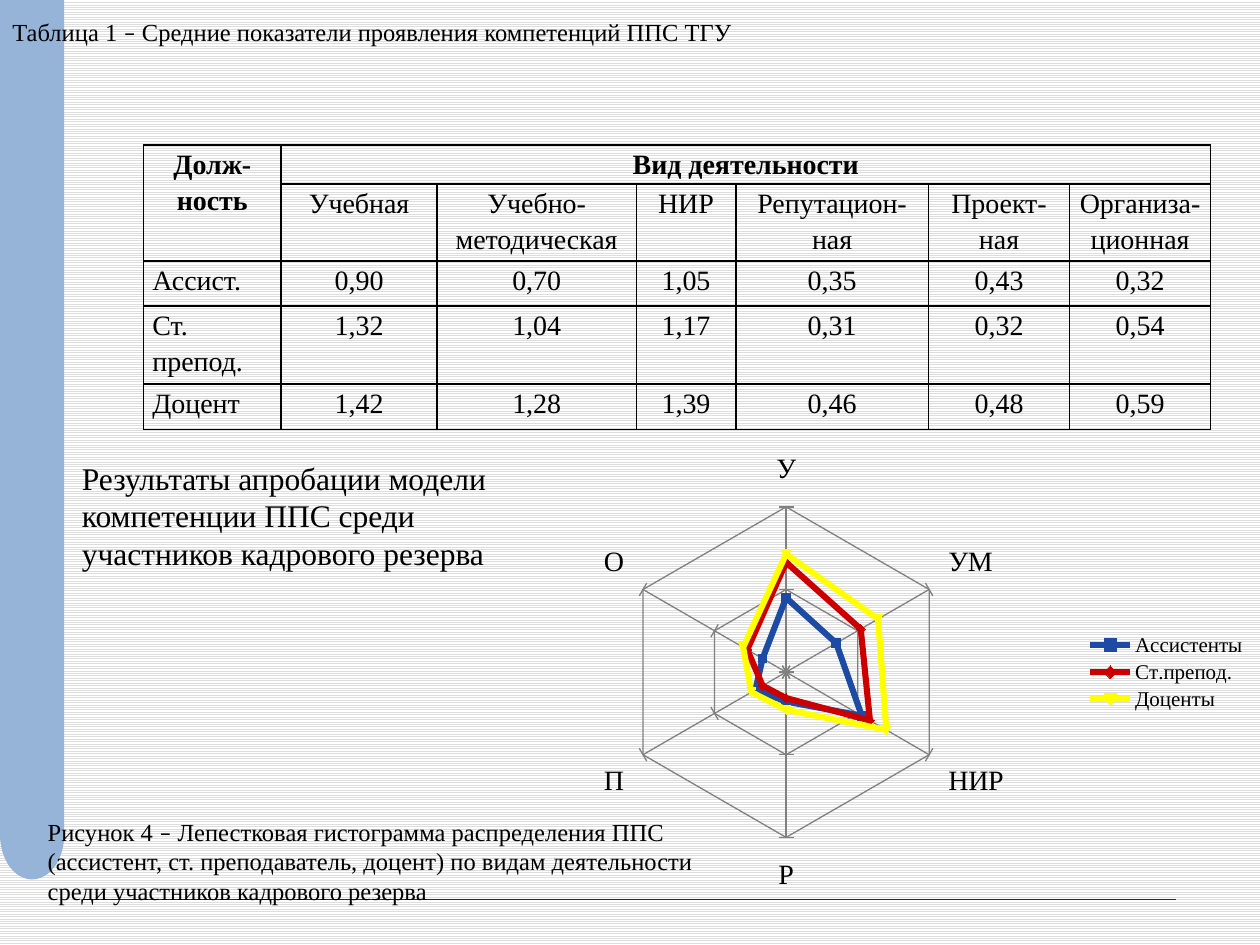
"""Build the slide on competency indicators of the teaching staff."""
from dataclasses import dataclass

from lxml import etree
from pptx import Presentation
from pptx import util as u
from pptx.chart import data as cd
from pptx.dml.color import RGBColor
from pptx.enum import chart as ce
from pptx.enum import dml, shapes, text
from pptx.oxml import ns

BLACK = RGBColor(0, 0, 0)
WHITE = RGBColor(0xFF, 0xFF, 0xFF)
STRIPE = RGBColor(0xDD, 0xDD, 0xDD)
NAVY = RGBColor(0x00, 0x33, 0x66)
SIDE_BLUE = RGBColor(0x96, 0xB4, 0xD7)
GRID_GREY = RGBColor(0x80, 0x80, 0x80)
SERIF = "Times New Roman"
DASH_FONT = "Calibri"


@dataclass
class Position:
    name: str
    scores: list[str]


@dataclass
class Profile:
    name: str
    values: list[int]
    color: RGBColor


POSITIONS = [
    Position("Ассист.", ["0,90", "0,70", "1,05", "0,35", "0,43", "0,32"]),
    Position("Ст. препод.", ["1,32", "1,04", "1,17", "0,31", "0,32", "0,54"]),
    Position("Доцент", ["1,42", "1,28", "1,39", "0,46", "0,48", "0,59"]),
]
ACTIVITIES = ["Учебная", "Учебно-методическая", "НИР", "Репутацион-ная",
              "Проект-ная", "Организа-ционная"]
COLUMN_WIDTHS = [1.09, 1.24, 1.58, 0.79, 1.53, 1.12, 1.12]
ROW_HEIGHTS = [0.31, 0.61, 0.36, 0.62, 0.36]
AXES = ["У", "УМ", "НИР", "Р", "П", "О"]
PROFILES = [
    Profile("Ассистенты", [63, 49, 74, 25, 30, 23], RGBColor(0x1D, 0x4A, 0xA3)),
    Profile("Ст.препод.", [93, 73, 82, 22, 23, 38], RGBColor(0xCC, 0, 0)),
    Profile("Доценты", [100, 90, 98, 32, 34, 42], RGBColor(0xFF, 0xFF, 0)),
]


def write(frame, wording: str, *, size: float, bold: bool = False,
          align=text.PP_ALIGN.LEFT, anchor=text.MSO_ANCHOR.TOP,
          spacing: float = 1.0) -> None:
    """Fill a text frame, setting each dash in its own font."""
    frame.word_wrap = True
    frame.vertical_anchor = anchor
    paragraph = frame.paragraphs[0]
    paragraph.alignment = align
    paragraph.line_spacing = spacing
    before, dash, after = wording.partition("–")
    for piece in filter(None, (before, dash, after)):
        run = paragraph.add_run()
        run.text = piece
        run.font.name = DASH_FONT if piece == "–" else SERIF
        run.font.size = u.Pt(size)
        run.font.bold = bold
        run.font.color.rgb = BLACK


def add_backdrop(slide) -> None:
    """Draw the striped background, the side band and the bottom rule."""
    fill = slide.background.fill
    fill.patterned()
    fill.pattern = dml.MSO_PATTERN.LIGHT_HORIZONTAL
    fill.fore_color.rgb = STRIPE
    fill.back_color.rgb = WHITE
    rule = slide.shapes.add_connector(
        shapes.MSO_CONNECTOR.STRAIGHT,
        u.Inches(0.67), u.Inches(7.14), u.Inches(9.33), u.Inches(7.14))
    rule.line.color.rgb = NAVY
    rule.line.width = u.Pt(0.25)
    etree.SubElement(rule.element.spPr, ns.qn("a:effectLst"))
    for preset, top, height in ((shapes.MSO_SHAPE.RECTANGLE, 0, 6.66),
                                (shapes.MSO_SHAPE.OVAL, 6.27, 0.71)):
        band = slide.shapes.add_shape(
            preset, 0, u.Inches(top), u.Inches(0.51), u.Inches(height))
        band.shadow.inherit = False
        band.fill.solid()
        band.fill.fore_color.rgb = SIDE_BLUE
        band.line.fill.background()


def add_borders(cell) -> None:
    """Give a cell thin black borders on every side."""
    properties = cell._tc.get_or_add_tcPr()
    for index, side in enumerate(("lnL", "lnR", "lnT", "lnB")):
        border = etree.Element(ns.qn(f"a:{side}"), w=str(u.Pt(1)))
        solid = etree.SubElement(border, ns.qn("a:solidFill"))
        etree.SubElement(solid, ns.qn("a:srgbClr"), val=str(BLACK))
        properties.insert(index, border)


def add_scores(slide) -> None:
    """Add the table of mean scores by position and activity."""
    rows = [["Долж-ность", "Вид деятельности"] + [""] * 5, [""] + ACTIVITIES]
    rows += [[position.name, *position.scores] for position in POSITIONS]
    table = slide.shapes.add_table(
        len(rows), len(COLUMN_WIDTHS), u.Inches(1.14), u.Inches(1.15),
        u.Inches(sum(COLUMN_WIDTHS)), u.Inches(sum(ROW_HEIGHTS))).table
    table.first_row = table.horz_banding = False
    for column, width in zip(table.columns, COLUMN_WIDTHS):
        column.width = u.Inches(width)
    for row, height in zip(table.rows, ROW_HEIGHTS):
        row.height = u.Inches(height)
    table.cell(0, 0).merge(table.cell(1, 0))
    table.cell(0, 1).merge(table.cell(0, 6))
    for r, row in enumerate(rows):
        for c, wording in enumerate(row):
            cell = table.cell(r, c)
            cell.margin_left = cell.margin_right = u.Inches(0.07)
            cell.margin_top = cell.margin_bottom = 0
            cell.fill.background()
            add_borders(cell)
            if wording:
                is_name = r > 1 and c == 0
                write(cell.text_frame, wording, size=16, bold=r == 0, spacing=1.15,
                      align=text.PP_ALIGN.LEFT if is_name else text.PP_ALIGN.CENTER)


def set_font(font, size: float) -> None:
    """Format chart lettering."""
    font.name = SERIF
    font.size = u.Pt(size)
    font.color.rgb = BLACK


def place_plot(chart, **fractions: float) -> None:
    """Fix the inner plot area as fractions of the chart."""
    plot_area = chart.element.find(".//" + ns.qn("c:plotArea"))
    for automatic in plot_area.findall(ns.qn("c:layout")):
        plot_area.remove(automatic)
    layout = etree.Element(ns.qn("c:layout"))
    manual = etree.SubElement(layout, ns.qn("c:manualLayout"))
    settings = {"layoutTarget": "inner", "xMode": "edge", "yMode": "edge", **fractions}
    for tag, value in settings.items():
        etree.SubElement(manual, ns.qn(f"c:{tag}"), val=str(value))
    plot_area.insert(0, layout)


def add_radar(slide) -> None:
    """Add the radar chart of activity by position."""
    figures = cd.CategoryChartData(number_format="0")
    figures.categories = AXES
    for profile in PROFILES:
        figures.add_series(profile.name, profile.values)
    chart = slide.shapes.add_chart(
        ce.XL_CHART_TYPE.RADAR_MARKERS, u.Inches(4.17), u.Inches(3.44),
        u.Inches(5.83), u.Inches(3.79), figures).chart
    chart.has_title = False
    set_font(chart.font, 10)
    chart.has_legend = True
    chart.legend.position = ce.XL_LEGEND_POSITION.RIGHT
    chart.legend.include_in_layout = False
    set_font(chart.legend.font, 12)
    set_font(chart.category_axis.tick_labels.font, 16)
    scale = chart.value_axis
    scale.minimum_scale, scale.maximum_scale, scale.major_unit = 0, 140, 70
    scale.tick_labels.number_format = "0.00"
    scale.tick_labels.number_format_is_linked = False
    scale.tick_label_position = ce.XL_TICK_LABEL_POSITION.NONE
    scale.major_tick_mark = ce.XL_TICK_MARK.CROSS
    scale.has_major_gridlines = True
    for line in (scale.format.line, scale.major_gridlines.format.line):
        line.color.rgb = GRID_GREY
        line.width = u.Pt(0.75)
    plot = chart.plots[0]
    plot.vary_by_categories = False
    for series, profile in zip(plot.series, PROFILES):
        series.format.line.color.rgb = profile.color
        series.format.line.width = u.Pt(3.5)
        series.marker.size = 5
        series.marker.format.fill.solid()
        series.marker.format.fill.fore_color.rgb = profile.color
        series.marker.format.line.color.rgb = profile.color
    place_plot(chart, x=0.13, y=0.15, w=0.45, h=0.7)


def add_caption(slide, wording: str, *box: float) -> None:
    """Add a caption in a box of left, top, width and height."""
    caption = slide.shapes.add_textbox(*map(u.Inches, box))
    write(caption.text_frame, wording, size=14, anchor=text.MSO_ANCHOR.MIDDLE)


def main() -> None:
    """Assemble and save the slide."""
    deck = Presentation()
    deck.slide_width, deck.slide_height = u.Inches(10), u.Inches(7.5)
    slide = deck.slides.add_slide(deck.slide_layouts[5])
    add_backdrop(slide)
    heading = slide.shapes.title
    heading.left, heading.top = u.Inches(0.55), u.Inches(3.59)
    heading.width, heading.height = u.Inches(3.74), u.Inches(1.01)
    heading.text_frame.auto_size = text.MSO_AUTO_SIZE.NONE
    write(heading.text_frame, "Результаты апробации модели компетенции ППС среди "
          "участников кадрового резерва", size=18)
    add_scores(slide)
    add_caption(slide, "Таблица 1 – Средние показатели проявления компетенций ППС ТГУ",
                0, 0, 10, 0.5)
    add_radar(slide)
    add_caption(slide, "Рисунок 4 – Лепестковая гистограмма распределения ППС (ассистент, "
                "ст. преподаватель, доцент) по видам деятельности среди участников "
                "кадрового резерва", 0.28, 6.43, 5.51, 0.81)
    deck.save("out.pptx")


if __name__ == "__main__":
    main()
